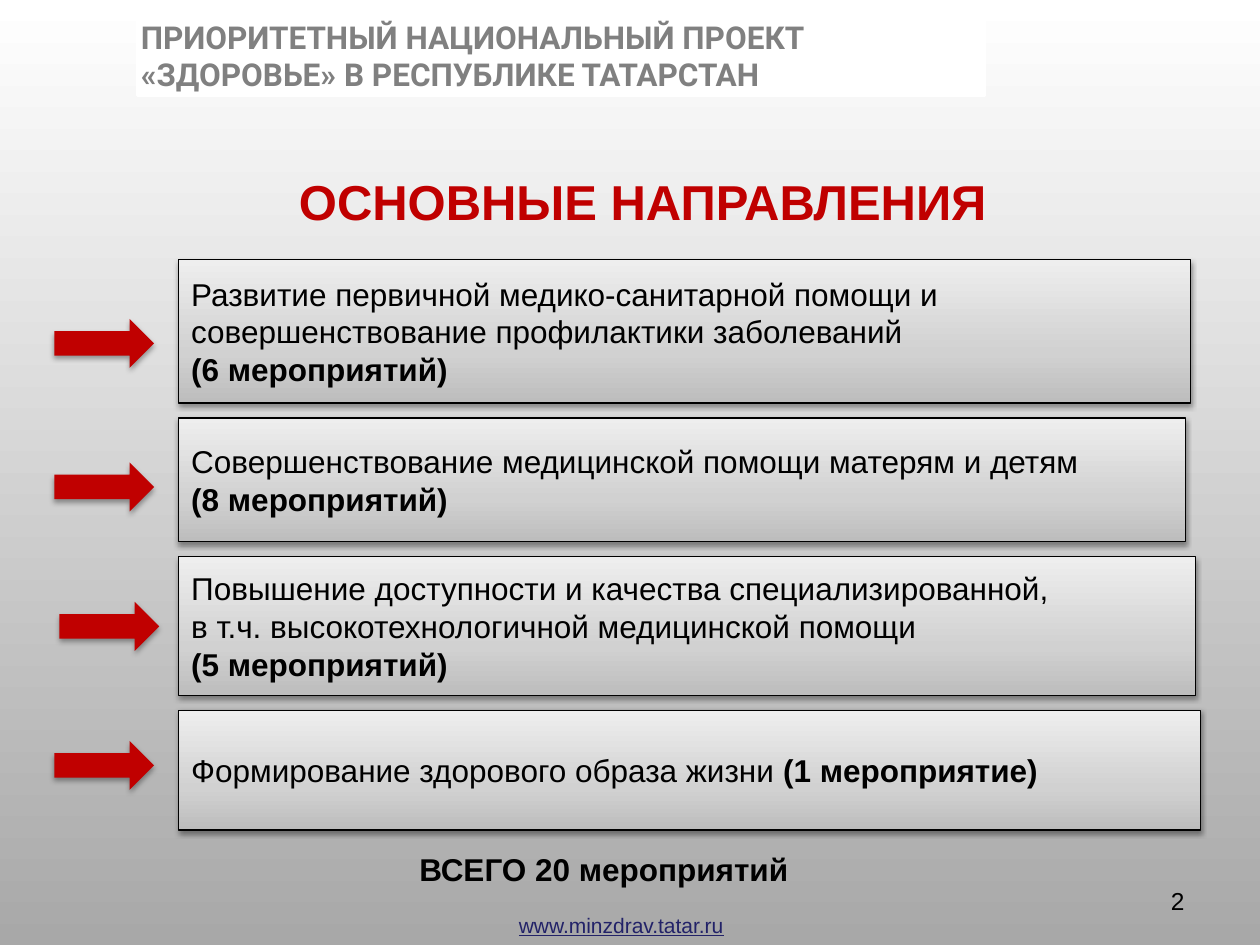
from copy import deepcopy

from lxml.etree import SubElement
from pptx import Presentation
from pptx.dml.color import RGBColor
from pptx.enum.shapes import MSO_SHAPE
from pptx.enum.text import MSO_ANCHOR, PP_ALIGN
from pptx.oxml.ns import qn
from pptx.util import Pt

WHITE = RGBColor(0xFF, 0xFF, 0xFF)
BLACK = RGBColor(0, 0, 0)
RED = RGBColor(0xC0, 0, 0)
GRAY = RGBColor(0x80, 0x80, 0x80)
NAVY = RGBColor(0x22, 0x22, 0x68)
ASH = RGBColor(0xA8, 0xA8, 0xA8)
STEPS = [(0, RGBColor(0xBD, 0xBD, 0xBD)),
         (0.35, RGBColor(0xD1, 0xD1, 0xD1)),
         (1, RGBColor(0xEE, 0xEE, 0xEE))]


def write(shape, text, size=18, color=BLACK, bold=False, font="Arial",
          align=PP_ALIGN.LEFT, wrap=True, under=None):
    """Fill the shape with one paragraph a line; what follows "|" is bold."""
    frame = shape.text_frame
    frame.word_wrap = wrap
    for i, line in enumerate(text.split("\n")):
        para = frame.paragraphs[0] if i == 0 else frame.add_paragraph()
        para.alignment = align
        plain, _, strong = line.partition("|")
        for part, heavy in ((plain, bold), (strong, True)):
            if part:
                run = para.add_run()
                run.text = part
                run.font.size = Pt(size)
                run.font.name = font
                run.font.bold = heavy
                run.font.underline = under
                run.font.color.rgb = color


def shade(shape, alpha, dist):
    """Give the shape a soft black shadow that falls straight down."""
    shape.shadow.inherit = False
    effects = shape._element.spPr.find(qn("a:effectLst"))
    outer = SubElement(effects, qn("a:outerShdw"), blurRad=str(Pt(3.1)),
                       dist=str(Pt(dist)), dir="5400000", rotWithShape="0")
    tone = SubElement(outer, qn("a:srgbClr"), val=str(BLACK))
    SubElement(tone, qn("a:alpha"), val=str(alpha * 1000))


deck = Presentation()
deck.slide_width, deck.slide_height = Pt(720), Pt(540)
slide = deck.slides.add_slide(deck.slide_layouts[6])
shapes = slide.shapes

# Background
back = slide.background.fill
back.gradient()
back.gradient_angle = 270
for stop, color in zip(back.gradient_stops, (WHITE, ASH)):
    stop.color.rgb = color

# Header
band = shapes.add_shape(MSO_SHAPE.RECTANGLE, Pt(78.5), Pt(11.5), Pt(484), Pt(43))
band.shadow.inherit = False
band.fill.solid()
band.fill.fore_color.rgb = WHITE
band.line.color.rgb = WHITE
band.line.width = Pt(2)
head = shapes.add_textbox(Pt(73.4), Pt(6.5), Pt(433.4), Pt(51))
write(head, "ПРИОРИТЕТНЫЙ НАЦИОНАЛЬНЫЙ ПРОЕКТ «ЗДОРОВЬЕ» В РЕСПУБЛИКЕ ТАТАРСТАН",
      color=GRAY, bold=True, font="Roboto")
title = shapes.add_textbox(Pt(161.3), Pt(94.3), Pt(411.8), Pt(41))
write(title, "ОСНОВНЫЕ НАПРАВЛЕНИЯ", size=28, color=RED, bold=True,
      align=PP_ALIGN.CENTER, wrap=False)

# Directions: width, height, arrow left, arrow middle, text
rows = [
    (578.2, 82, 31, 196.2, "Развитие первичной медико-санитарной помощи и\n"
     "совершенствование профилактики заболеваний\n|(6 мероприятий)"),
    (575.3, 70.6, 31, 278.3, "Совершенствование медицинской помощи матерям и детям\n"
     "|(8 мероприятий)"),
    (581, 79.2, 34, 358, "Повышение доступности и качества специализированной,\n"
     "в т.ч. высокотехнологичной медицинской помощи\n|(5 мероприятий)"),
    (584, 68.4, 31, 437.4, "Формирование здорового образа жизни |(1 мероприятие)"),
]
top, gap = 148.3, 8.6
for width, height, left, middle, text in rows:
    box = shapes.add_shape(MSO_SHAPE.RECTANGLE, Pt(102.2), Pt(top),
                           Pt(width), Pt(height))
    box.fill.gradient()
    box.fill.gradient_angle = 90
    stops = box._element.spPr.find(".//" + qn("a:gsLst"))
    stops.insert(1, deepcopy(stops[0]))
    for stop, (place, color) in zip(box.fill.gradient_stops, STEPS):
        stop.position = place
        stop.color.rgb = color
    box.line.color.rgb = BLACK
    box.line.width = Pt(0.75)
    shade(box, alpha=38, dist=1.6)
    box.text_frame.vertical_anchor = MSO_ANCHOR.MIDDLE
    write(box, text)

    arrow = shapes.add_shape(MSO_SHAPE.RIGHT_ARROW, Pt(left), Pt(middle - 14),
                             Pt(57), Pt(28))
    arrow.fill.solid()
    arrow.fill.fore_color.rgb = RED
    arrow.line.fill.background()
    shade(arrow, alpha=35, dist=1.8)
    top += height + gap

# Footer
total = shapes.add_textbox(Pt(232.5), Pt(482.4), Pt(226.8), Pt(29))
write(total, "ВСЕГО 20 мероприятий", bold=True, wrap=False)
site = shapes.add_textbox(Pt(289.4), Pt(517.7), Pt(132.5), Pt(21.6))
write(site, "www.minzdrav.tatar.ru", size=12, color=NAVY, wrap=False, under=True)
page = shapes.add_textbox(Pt(660.2), Pt(502.6), Pt(23.8), Pt(37.4))
write(page, "2", size=14, align=PP_ALIGN.RIGHT)

deck.save("out.pptx")
